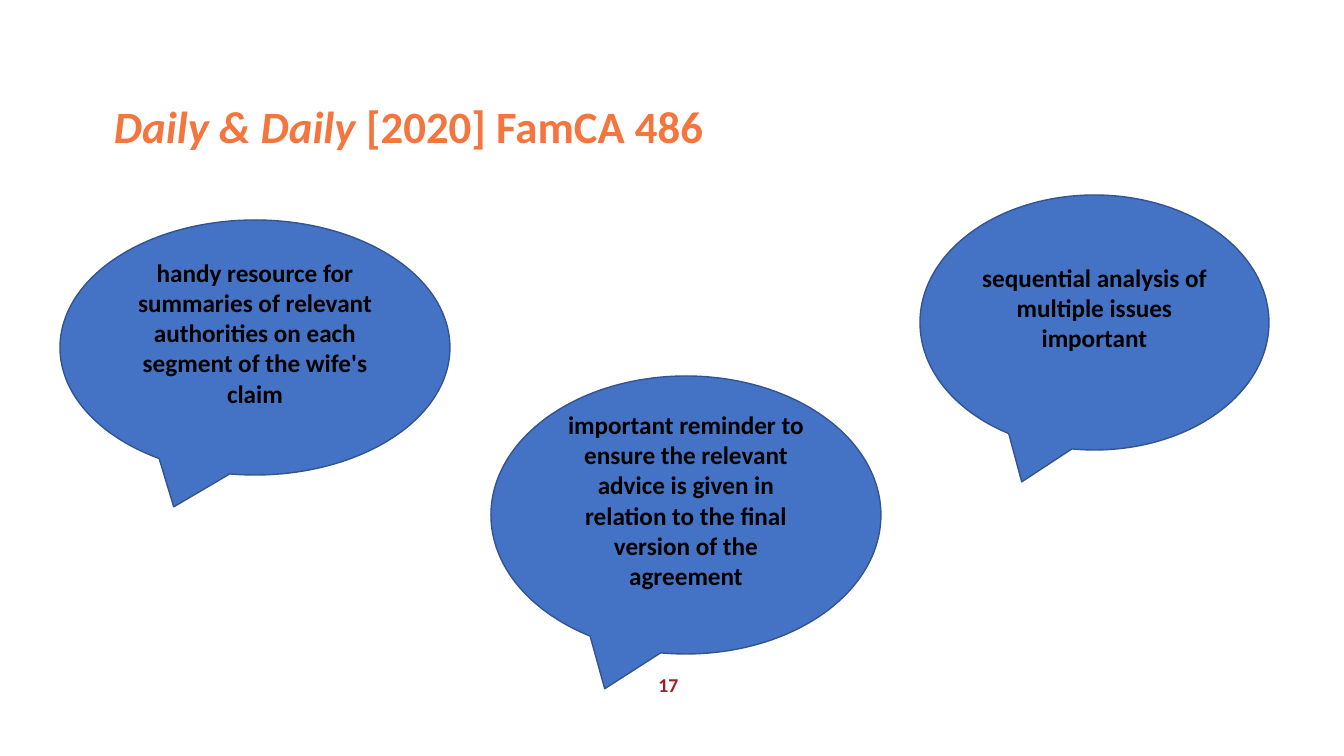
from dataclasses import dataclass

from pptx import Presentation
from pptx import util as u
from pptx.dml.color import RGBColor
from pptx.enum import shapes, text

PX = u.Inches(1) / 100.8


@dataclass(frozen=True)
class Theme:
    font: str = "Calibri"
    title_color: RGBColor = RGBColor(0xF4, 0x75, 0x3D)
    number_color: RGBColor = RGBColor(0xA1, 0x1D, 0x26)
    bubble_fill: RGBColor = RGBColor(0x44, 0x72, 0xC4)
    bubble_line: RGBColor = RGBColor(0x32, 0x54, 0x91)
    bubble_text: RGBColor = RGBColor(0, 0, 0)
    title_size: int = 32
    bubble_size: int = 18
    number_size: int = 14


THEME = Theme()

# left, top, width, height in px, then wording
BUBBLES = [
    (60, 220, 390, 255,
     "handy resource for summaries of relevant authorities on each segment of the wife's claim"),
    (491, 376, 390, 278,
     "important reminder to ensure the relevant advice is given in relation to the final "
     "version of the agreement"),
    (920, 195, 349, 255, "sequential analysis of multiple issues important"),
]


def px(length):
    return u.Emu(round(length * PX))


def style_paragraph(paragraph, size, color, alignment):
    paragraph.alignment = alignment
    paragraph.font.name = THEME.font
    paragraph.font.size = u.Pt(size)
    paragraph.font.bold = True
    paragraph.font.color.rgb = color


def add_text(slide, box, runs, size, color, alignment):
    """Add a one-paragraph text box; runs are (wording, italic) pairs."""
    frame = slide.shapes.add_textbox(*map(px, box)).text_frame
    frame.word_wrap = True
    paragraph = frame.paragraphs[0]
    style_paragraph(paragraph, size, color, alignment)
    for wording, italic in runs:
        run = paragraph.add_run()
        run.text = wording
        run.font.italic = italic
    return paragraph


def add_bubble(slide, left, top, width, height, wording):
    shape = slide.shapes.add_shape(
        shapes.MSO_SHAPE.OVAL_CALLOUT, *map(px, (left, top, width, height)))
    shape.shadow.inherit = False
    shape.fill.solid()
    shape.fill.fore_color.rgb = THEME.bubble_fill
    shape.line.color.rgb = THEME.bubble_line
    shape.line.width = u.Pt(1)

    # The deep bottom margin lifts the text by half a line
    frame = shape.text_frame
    frame.word_wrap = True
    frame.vertical_anchor = text.MSO_ANCHOR.MIDDLE
    frame.margin_bottom = px(35)
    frame.text = wording
    style_paragraph(frame.paragraphs[0], THEME.bubble_size, THEME.bubble_text,
                    text.PP_ALIGN.CENTER)


def main():
    presentation = Presentation()
    presentation.slide_width = px(1344)
    presentation.slide_height = px(756)
    slide = presentation.slides.add_slide(presentation.slide_layouts[6])

    # Slide number
    add_text(slide, (564, 668, 209, 34), [("17", False)],
             THEME.number_size, THEME.number_color, text.PP_ALIGN.CENTER)

    # Title
    title = add_text(slide, (104, 100, 1131, 74),
                     [("Daily & Daily ", True), ("[2020] FamCA 486", False)],
                     THEME.title_size, THEME.title_color, text.PP_ALIGN.LEFT)
    title.line_spacing = 0.9

    # Speech bubbles
    for bubble in BUBBLES:
        add_bubble(slide, *bubble)

    presentation.save("out.pptx")


if __name__ == "__main__":
    main()
